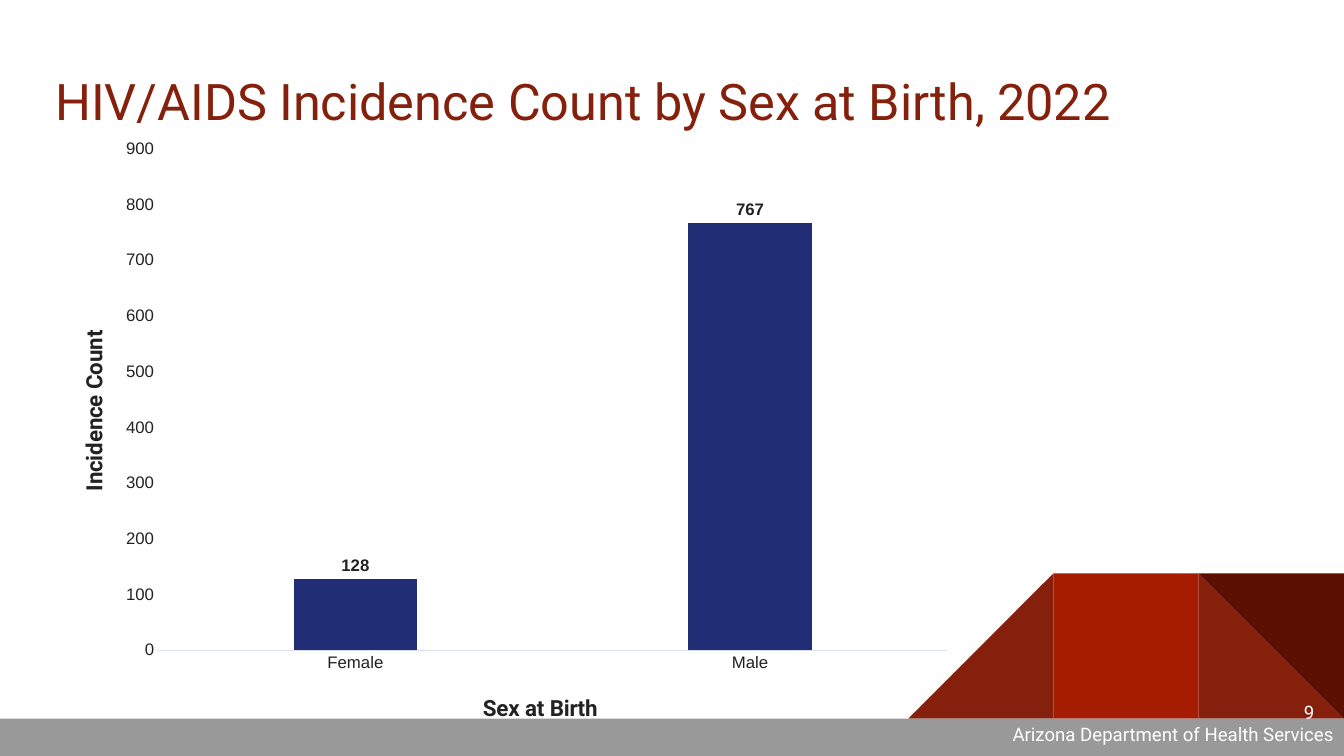
from dataclasses import dataclass

import lxml.etree
import pptx
import pptx.chart.axis
import pptx.chart.data
import pptx.dml.color
import pptx.enum.chart
import pptx.enum.shapes
import pptx.enum.text
import pptx.oxml.ns
import pptx.slide
import pptx.text.text
import pptx.util

Cm = pptx.util.Cm
MSO_SHAPE = pptx.enum.shapes.MSO_SHAPE
PP_ALIGN = pptx.enum.text.PP_ALIGN
MSO_ANCHOR = pptx.enum.text.MSO_ANCHOR
CHART_ENUM = pptx.enum.chart
qn = pptx.oxml.ns.qn


@dataclass(frozen=True)
class Theme:
    brick: str = "85200C"
    red: str = "A61C00"
    maroon: str = "5B0F00"
    gray: str = "999999"
    white: str = "FFFFFF"
    ink: str = "222222"
    bar: str = "212D74"
    axis_line: str = "D9DDF4"
    heading_font: str = "Roboto"
    chart_font: str = "Arial"
    title_size: float = 36
    axis_title_size: float = 16
    label_size: float = 12
    footer_size: float = 13.3


@dataclass(frozen=True)
class Box:
    left: float
    top: float
    width: float
    height: float

    def lengths(self) -> tuple:
        return Cm(self.left), Cm(self.top), Cm(self.width), Cm(self.height)


@dataclass(frozen=True)
class Panel:
    preset: MSO_SHAPE
    box: Box
    color: str
    rotation: float = 0


@dataclass(frozen=True)
class Label:
    text: str
    box: Box
    size: float
    color: str
    alignment: PP_ALIGN = PP_ALIGN.LEFT
    anchor: MSO_ANCHOR = MSO_ANCHOR.TOP


THEME = Theme()
SLIDE_WIDTH, SLIDE_HEIGHT = 33.87, 19.05
FOOTER_TOP = 18.11
TILE = 3.66
TILE_LEFTS = [SLIDE_WIDTH - TILE * count for count in (3, 2, 1)]


def tile(column: int) -> Box:
    return Box(TILE_LEFTS[column], FOOTER_TOP - TILE, TILE, TILE)


PANELS = [
    Panel(MSO_SHAPE.RIGHT_TRIANGLE, tile(2), THEME.brick),
    Panel(MSO_SHAPE.RIGHT_TRIANGLE, tile(0), THEME.brick, 270),
    Panel(MSO_SHAPE.RECTANGLE, tile(1), THEME.red),
    Panel(MSO_SHAPE.RIGHT_TRIANGLE, tile(2), THEME.maroon, 180),
    Panel(MSO_SHAPE.RECTANGLE,
          Box(0, FOOTER_TOP, SLIDE_WIDTH, SLIDE_HEIGHT - FOOTER_TOP), THEME.gray),
]
CORNER_ACCENT = Panel(MSO_SHAPE.RIGHT_TRIANGLE, Box(23.42, 14.71, 2.9, 2.87), THEME.brick, 270)
FOOTER = Label("Arizona Department of Health Services", Box(24, 17.96, 9.87, 1.09),
               THEME.footer_size, THEME.white, PP_ALIGN.RIGHT)
TITLE = Label("HIV/AIDS Incidence Count by Sex at Birth, 2022", Box(1.14, 1.52, 31.55, 2.26),
              THEME.title_size, THEME.brick)
PAGE_NUMBER = Label("9", Box(31.34, 17.22, 2.03, 1.45), THEME.footer_size, THEME.white,
                    PP_ALIGN.RIGHT, MSO_ANCHOR.MIDDLE)
CHART_BOX = Box(1.68, 3.3, 22.58, 15.06)


def rgb(color: str) -> pptx.dml.color.RGBColor:
    return pptx.dml.color.RGBColor.from_string(color)


def style_font(font: pptx.text.text.Font, name: str, size: float, color: str,
               bold: bool = False) -> None:
    font.name = name
    font.size = pptx.util.Pt(size)
    font.color.rgb = rgb(color)
    font.bold = bold


def add_panel(slide: pptx.slide.Slide, panel: Panel) -> None:
    shape = slide.shapes.add_shape(panel.preset, *panel.box.lengths())
    shape.shadow.inherit = False
    shape.fill.solid()
    shape.fill.fore_color.rgb = rgb(panel.color)
    shape.line.fill.background()
    shape.rotation = panel.rotation


def add_label(slide: pptx.slide.Slide, label: Label) -> None:
    text_frame = slide.shapes.add_textbox(*label.box.lengths()).text_frame
    text_frame.word_wrap = True
    text_frame.vertical_anchor = label.anchor
    text_frame.margin_left = text_frame.margin_right = Cm(0.25)
    text_frame.margin_top = text_frame.margin_bottom = Cm(0.25)
    text_frame.text = label.text
    paragraph = text_frame.paragraphs[0]
    paragraph.alignment = label.alignment
    style_font(paragraph.runs[0].font, THEME.heading_font, label.size, label.color)


def set_layout(parent: lxml.etree._Element, index: int, **settings: object) -> None:
    """Give a chart part a manual layout, as fractions of the chart's size."""
    for old_layout in parent.findall(qn("c:layout")):
        parent.remove(old_layout)
    layout = lxml.etree.Element(qn("c:layout"))
    manual = lxml.etree.SubElement(layout, qn("c:manualLayout"))
    for name, value in settings.items():
        lxml.etree.SubElement(manual, qn(f"c:{name}")).set("val", str(value))
    parent.insert(index, layout)


def style_axis(axis: pptx.chart.axis._BaseAxis, title: str, x: float, y: float) -> None:
    axis.has_major_gridlines = False
    axis.major_tick_mark = axis.minor_tick_mark = CHART_ENUM.XL_TICK_MARK.NONE
    style_font(axis.tick_labels.font, THEME.chart_font, THEME.label_size, THEME.ink)
    axis_title = axis.axis_title
    axis_title.text_frame.text = title
    style_font(axis_title.text_frame.paragraphs[0].runs[0].font, THEME.heading_font,
               THEME.axis_title_size, THEME.ink, bold=True)
    set_layout(axis_title._element, 1, xMode="edge", yMode="edge", x=x, y=y)


def add_incidence_chart(slide: pptx.slide.Slide) -> None:
    chart_data = pptx.chart.data.CategoryChartData()
    chart_data.categories = ["Female", "Male"]
    chart_data.add_series("Series 1", [128, 767])
    chart = slide.shapes.add_chart(CHART_ENUM.XL_CHART_TYPE.COLUMN_CLUSTERED,
                                   *CHART_BOX.lengths(), chart_data).chart
    chart.has_title = False
    chart.has_legend = False
    style_font(chart.font, THEME.chart_font, THEME.label_size, THEME.ink)

    style_axis(chart.category_axis, "Sex at Birth", 0.46, 0.94)
    chart.category_axis.format.line.color.rgb = rgb(THEME.axis_line)
    chart.category_axis.format.line.width = pptx.util.Pt(0.75)
    value_axis = chart.value_axis
    style_axis(value_axis, "Incidence Count", 0.01, 0.33)
    value_axis.format.line.fill.background()
    value_axis.minimum_scale, value_axis.maximum_scale, value_axis.major_unit = 0, 900, 100
    text_body = value_axis.axis_title.text_frame._txBody
    text_body.find(qn("a:bodyPr")).set("rot", "-5400000")

    plot = chart.plots[0]
    plot.vary_by_categories = False
    plot.gap_width, plot.overlap = 219, -27
    series = plot.series[0]
    series.format.fill.solid()
    series.format.fill.fore_color.rgb = rgb(THEME.bar)
    labels = series.data_labels
    labels.show_value = True
    labels.position = CHART_ENUM.XL_LABEL_POSITION.OUTSIDE_END
    style_font(labels.font, THEME.chart_font, THEME.label_size, THEME.ink, bold=True)
    plot_area = chart._chartSpace.find(f".//{qn('c:plotArea')}")
    set_layout(plot_area, 0, layoutTarget="inner", xMode="edge", yMode="edge",
               x=0.102, y=0.03, w=0.881, h=0.843)


def main() -> None:
    presentation = pptx.Presentation()
    presentation.slide_width, presentation.slide_height = Cm(SLIDE_WIDTH), Cm(SLIDE_HEIGHT)
    slide = presentation.slides.add_slide(presentation.slide_layouts[6])
    for panel in PANELS:
        add_panel(slide, panel)
    add_label(slide, FOOTER)
    add_label(slide, TITLE)
    add_incidence_chart(slide)
    add_label(slide, PAGE_NUMBER)
    add_panel(slide, CORNER_ACCENT)
    presentation.save("out.pptx")


if __name__ == "__main__":
    main()
